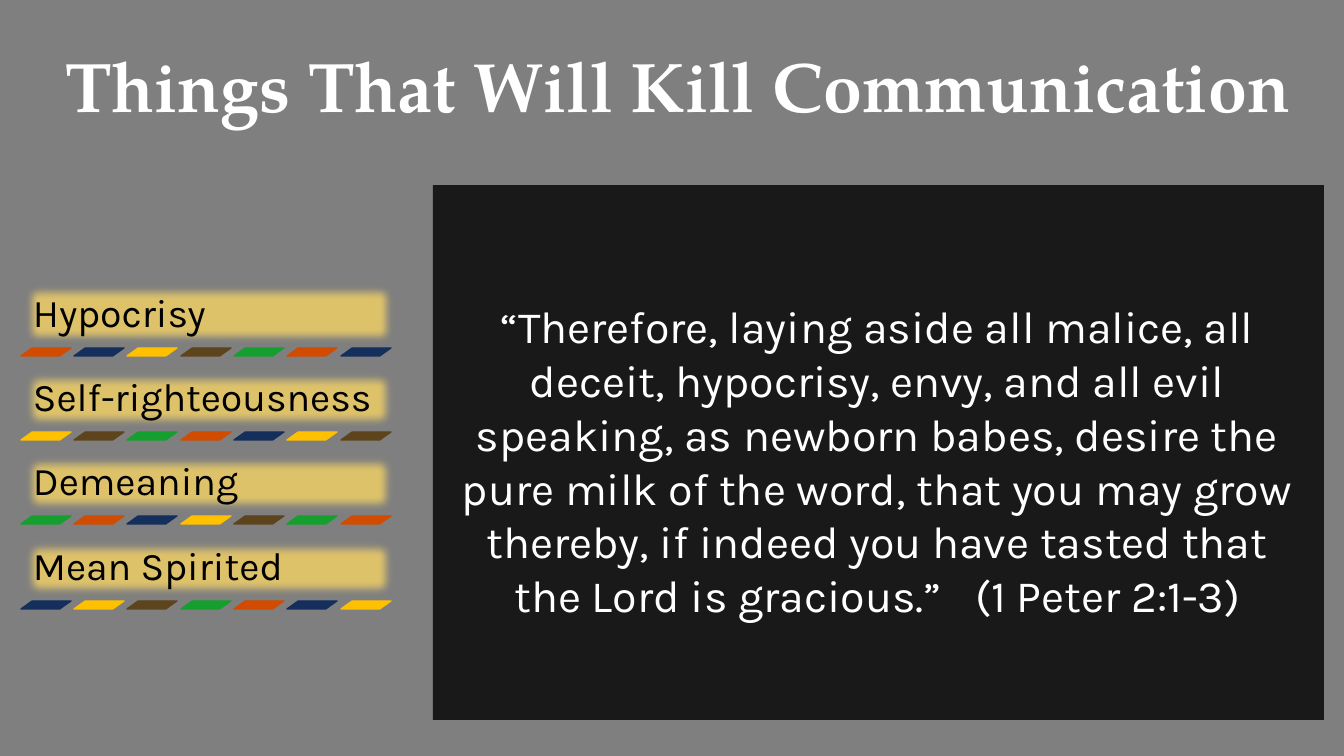
from dataclasses import dataclass
from lxml.etree import SubElement as Sub
from pptx import Presentation
from pptx.dml.color import RGBColor as RGB
from pptx.enum.shapes import MSO_SHAPE as Kind
from pptx.enum.text import MSO_ANCHOR as Anchor, PP_ALIGN as Align
from pptx.oxml.ns import qn
from pptx.util import Pt


@dataclass
class Theme:
    black: str = "000000"
    white: str = "FFFFFF"
    straw: str = "FFD966"
    dashes: tuple = ("D14C00", "142F5C", "FFC000", "5E441C", "149F2F")
    serif: str = "TeX Gyre Pagella"
    sans: str = "Karla"
    title: int = 50
    verse: int = 32
    label: int = 28


theme = Theme()
scale = 914400 / 100.8


def block(kind, box, color, alpha=100):
    shape = slide.shapes.add_shape(kind, *[int(n * scale) for n in box])
    shape.shadow.inherit = False
    shape.fill.solid()
    shape.fill.fore_color.rgb = RGB.from_string(color)
    shape.line.fill.background()
    if alpha < 100:
        tint = shape.fill._xPr.find(".//" + qn("a:srgbClr"))
        Sub(tint, qn("a:alpha"), val=str(alpha * 1000))
    return shape


def write(box, words, face, size, color, pads, anchor, align):
    frame = slide.shapes.add_textbox(*[int(n * scale) for n in box]).text_frame
    frame.word_wrap = True
    frame.vertical_anchor = anchor
    (frame.margin_left, frame.margin_top,
     frame.margin_right, frame.margin_bottom) = [int(n * scale) for n in pads]
    para = frame.paragraphs[0]
    para.alignment = align
    for word in words:
        para.add_run().text = word
    para.font.name = face
    para.font.size = Pt(size)
    para.font.color.rgb = RGB.from_string(color)
    return para


deck = Presentation()
deck.slide_width = int(1344 * scale)
deck.slide_height = int(756 * scale)
slide = deck.slides.add_slide(deck.slide_layouts[6])

block(Kind.RECTANGLE, (0, 0, 1344, 756), theme.black, 50)
block(Kind.RECTANGLE, (433, 185, 891, 535), theme.black, 80)

title = write((38, 26, 1280, 102), ["Things That Will Kill Communication"],
              theme.serif, theme.title, theme.white, (0, 0, 0, 0),
              Anchor.BOTTOM, Align.CENTER)
title.font.bold = True
title.line_spacing = 0.9

verse = write((438, 186, 879, 528), [
    "“Therefore, laying aside all malice, all deceit, hypocrisy, envy, "
    "and all evil speaking, as newborn babes, desire the pure milk of the "
    "word, that you may grow thereby, if indeed you have tasted that the "
    "Lord is gracious.”", " ", "(1 Peter 2:1-3)"],
    theme.sans, theme.verse, theme.white, (10, 113, 10, 5),
    Anchor.TOP, Align.CENTER)
verse.runs[1]._r.get_or_add_rPr().set("spc", "1600")

habits = [("Hypocrisy", 67), ("Self-righteousness", 64),
          ("Demeaning", 64), ("Mean Spirited", 64)]
count = 7
for row, (habit, tall) in enumerate(habits):
    base = 348 + row * 253 // 3
    box = (21, base - tall, 377, tall)
    bar = block(Kind.RECTANGLE, box, theme.straw, 75)
    effects = bar._element.spPr.find(qn("a:effectLst"))
    Sub(effects, qn("a:softEdge"), rad=str(int(10 * scale)))
    label = write(box, [habit], theme.sans, theme.label, theme.black,
                  (12, 12, 12, 12), Anchor.BOTTOM, Align.LEFT)
    label.line_spacing = 0.9
    label.space_after = Pt(24)
    for col in range(count):
        color = theme.dashes[(row * count + col) % len(theme.dashes)]
        dash = block(Kind.PARALLELOGRAM,
                     (21 + col * 160 // 3, base, 50, 8), color)
        dash.adjustments[0] = 1.408
        dash.line.color.rgb = RGB.from_string(color)
        dash.line.width = Pt(1)

deck.save("out.pptx")
